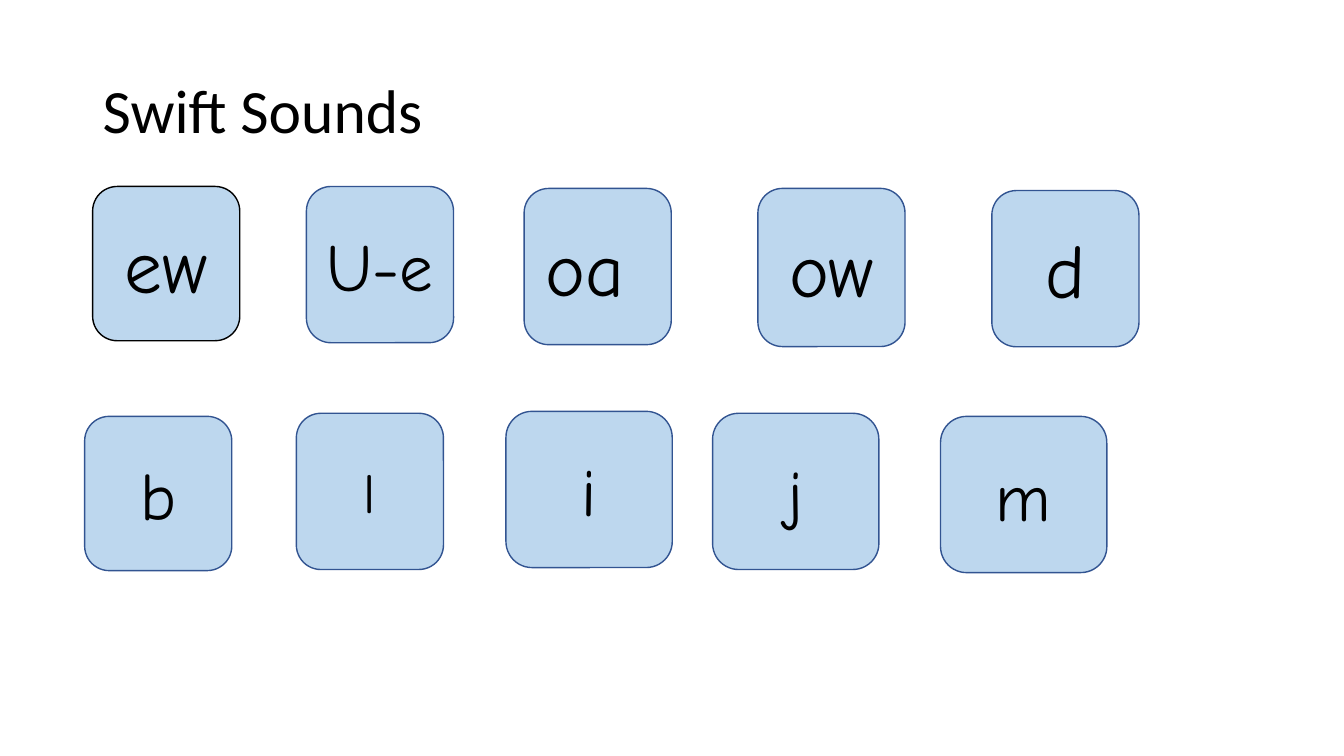
from dataclasses import dataclass
from pptx import Presentation
from pptx.dml.color import RGBColor
from pptx.enum.shapes import MSO_SHAPE
from pptx.enum.text import MSO_ANCHOR, MSO_AUTO_SIZE, PP_ALIGN
from pptx.util import Pt

ROUNDED = MSO_SHAPE.ROUNDED_RECTANGLE
MIDDLE = MSO_ANCHOR.MIDDLE
NO_FIT = MSO_AUTO_SIZE.NONE
LEFT, CENTER = PP_ALIGN.LEFT, PP_ALIGN.CENTER
TITLE_ONLY = 5


@dataclass(frozen=True)
class Theme:
    ink: RGBColor = RGBColor(0x00, 0x00, 0x00)
    card: RGBColor = RGBColor(0xBD, 0xD7, 0xEE)
    outline: RGBColor = RGBColor(0x32, 0x54, 0x91)
    title_font: str = "Calibri"
    sound_font: str = "Comic Neue"
    title: int = 44
    large: int = 54
    medium: int = 48
    small: int = 40


THEME = Theme()

TITLE_BOX = (66.2, 28.8, 828, 104.4)
VOWEL_ROW_BOX = (66.2, 133.2)
LETTER_ROW_BOX = (60.5, 293.8)

VOWEL_CARDS = [
    ("ew", THEME.large, THEME.ink, 0, 0, 105.1, 110.2),
    ("U-e", THEME.medium, THEME.outline, 152.7, 0, 105.1, 111.6),
    ("oa ", THEME.large, THEME.outline, 308.2, 1.4, 105.1, 111.6),
    ("ow", THEME.large, THEME.outline, 475.2, 1.4, 105.1, 113),
    ("d", THEME.large, THEME.outline, 642.3, 2.9, 105.1, 111.6),
]
LETTER_CARDS = [
    ("b", THEME.medium, THEME.outline, 0, 3.6, 105.1, 110.2),
    ("l", THEME.small, THEME.outline, 151.2, 1.4, 105.1, 111.6),
    ("i", THEME.medium, THEME.outline, 300.9, 0, 118.8, 111.6),
    ("j", THEME.medium, THEME.outline, 448.5, 1.4, 118.8, 111.6),
    ("m", THEME.medium, THEME.outline, 611.3, 3.6, 118.8, 111.6),
]


def apply_format(target, values):
    for attribute, value in values.items():
        setattr(target, attribute, value)


def write_text(holder, wording, font_name, size, alignment):
    frame = holder.text_frame
    frame.text = wording
    apply_format(frame, {"word_wrap": True, "auto_size": NO_FIT,
                         "vertical_anchor": MIDDLE})
    paragraph = frame.paragraphs[0]
    paragraph.alignment = alignment
    font = paragraph.runs[0].font
    apply_format(font, {"name": font_name, "size": Pt(size)})
    font.color.rgb = THEME.ink
    return paragraph


def place_title(slide, box):
    heading = slide.shapes.title
    sides = ("left", "top", "width", "height")
    apply_format(heading, dict(zip(sides, map(Pt, box))))
    paragraph = write_text(heading, "Swift Sounds", THEME.title_font,
                           THEME.title, LEFT)
    paragraph.line_spacing = 0.9


def place_sound_row(slide, box, cards):
    row_left, row_top = box
    for sound, size, outline, left, top, width, height in cards:
        card = slide.shapes.add_shape(ROUNDED, Pt(row_left + left),
                                      Pt(row_top + top), Pt(width), Pt(height))
        card.shadow.inherit = False
        card.fill.solid()
        card.fill.fore_color.rgb = THEME.card
        card.line.color.rgb = outline
        card.line.width = Pt(1)
        write_text(card, sound, THEME.sound_font, size, CENTER)


def main():
    deck = Presentation()
    apply_format(deck, {"slide_width": Pt(960), "slide_height": Pt(540)})
    slide = deck.slides.add_slide(deck.slide_layouts[TITLE_ONLY])
    place_title(slide, TITLE_BOX)
    place_sound_row(slide, VOWEL_ROW_BOX, VOWEL_CARDS)
    place_sound_row(slide, LETTER_ROW_BOX, LETTER_CARDS)
    deck.save("out.pptx")


if __name__ == "__main__":
    main()
